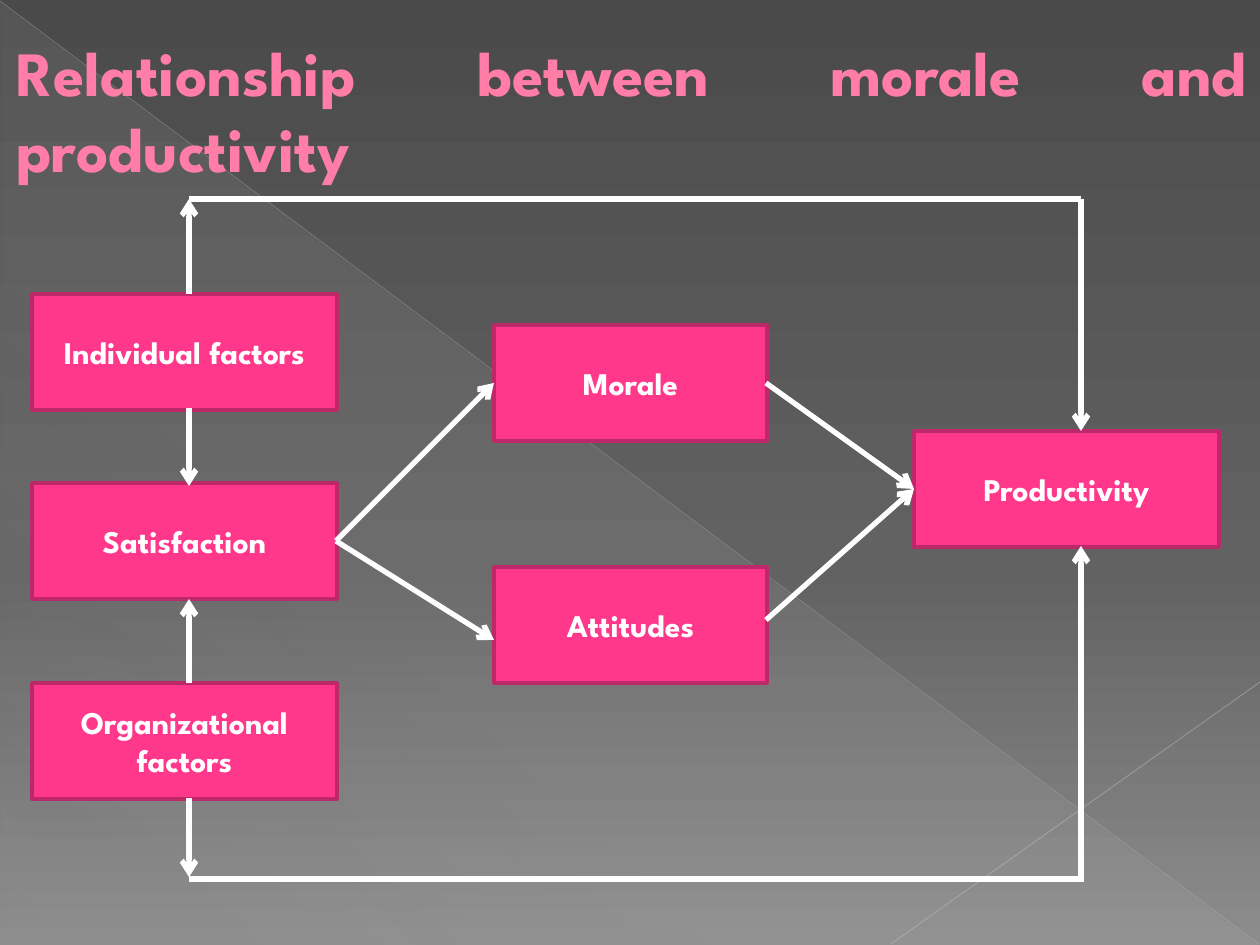
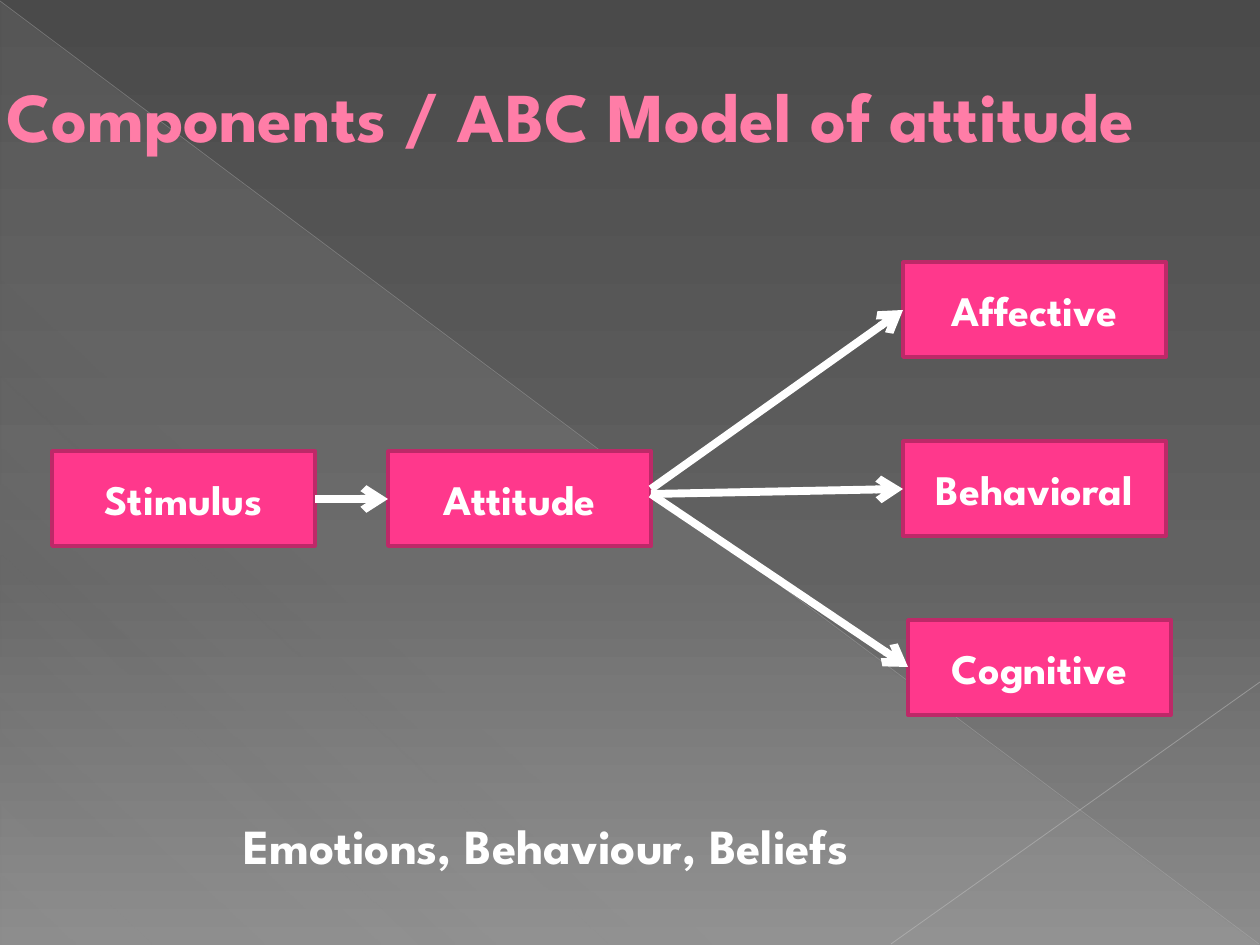
from dataclasses import dataclass

from lxml import etree
from pptx import Presentation
from pptx.dml.color import RGBColor
from pptx.enum import shapes, text
from pptx.oxml.ns import qn
from pptx import util as u

SCALE = 914400 / 126  # EMU in one px
WIDE, HIGH = 1260, 945


@dataclass(frozen=True)
class Theme:
    font: str = "League Spartan"
    white: str = "FFFFFF"
    pink: str = "FF388C"
    edge: str = "BD2968"
    title: str = "FF7DA7"
    rim: str = "B12761"
    # Gradient stops: place, colour, opacity in percent
    back: tuple = ((0, "4A4A4A", 100), (60, "626262", 100), (100, "8C8C8C", 100))
    glow: tuple = ((0, "D2D2D2", 10), (70, "D2D2D2", 8), (100, "D2D2D2", 1))
    # Hairlines: start, end, colour, width, opacity
    rays: tuple = (
        ((0, 1), (1259, 944), "BFBFBF", 0.39, 35),
        ((1260, 682), (891, 944), "C6C6C6", 0.47, 45),
    )
    # Line widths and type sizes
    border: float = 2
    rim_size: float = 0.5
    thin: float = 3
    thick: float = 4.5
    small: int = 18
    body: int = 24
    note: int = 28
    head: int = 36
    large: int = 40
    indent: int = 67


def px(*sizes):
    return [u.Emu(round(size * SCALE)) for size in sizes]


def rgb(code):
    return RGBColor.from_string(code)


def add(parent, tag, **attrs):
    return etree.SubElement(parent, qn(tag), {k: str(v) for k, v in attrs.items()})


class Deck:
    def __init__(self, theme):
        self.theme = theme
        self.show = Presentation()
        self.show.slide_width, self.show.slide_height = px(WIDE, HIGH)
        self.slide = None

    # Shared backdrop
    def page(self):
        self.slide = self.show.slides.add_slide(self.show.slide_layouts[6])
        self.blend(self.slide.background.fill, self.slide._element, self.theme.back, 90)
        wedge = self.slide.shapes.add_shape(
            shapes.MSO_SHAPE.RIGHT_TRIANGLE, *px(1, 2, 1258, 943))
        wedge.shadow.inherit = False
        wedge.line.fill.background()
        self.blend(wedge.fill, wedge._element, self.theme.glow, 133)
        for start, end, color, width, alpha in self.theme.rays:
            self.line(start, end, width, color, alpha=alpha)

    def blend(self, fill, owner, stops, angle):
        fill.gradient()
        fill.gradient_angle = 360 - angle
        group = owner.find(".//" + qn("a:gsLst"))
        for old in list(group):
            group.remove(old)
        for place, color, alpha in stops:
            stop = add(group, "a:gs", pos=place * 1000)
            tint = add(stop, "a:srgbClr", val=color)
            add(tint, "a:alpha", val=alpha * 1000)

    # Text
    def put(self, frame, words, size, color, align):
        frame.word_wrap = True
        para = frame.paragraphs[0]
        para.alignment = align
        run = para.add_run()
        run.text = words
        font = run.font
        font.name, font.size, font.bold = self.theme.font, u.Pt(size), True
        font.color.rgb = rgb(color)
        return para, run

    def title(self, place, words, size, align=text.PP_ALIGN.LEFT):
        frame = self.slide.shapes.add_textbox(*px(*place)).text_frame
        frame.vertical_anchor = text.MSO_ANCHOR.MIDDLE
        para, run = self.put(frame, words, size, self.theme.title, align)
        props = para._p.get_or_add_pPr()
        props.set("marL", str(px(self.theme.indent)[0]))
        props.set("indent", "0")
        style = run._r.get_or_add_rPr()
        rim = add(style, "a:ln", w=u.Pt(self.theme.rim_size))
        add(add(rim, "a:solidFill"), "a:srgbClr", val=self.theme.rim)
        style.insert(0, rim)

    def note(self, place, words):
        frame = self.slide.shapes.add_textbox(*px(*place)).text_frame
        self.put(frame, words, self.theme.note, self.theme.white, text.PP_ALIGN.LEFT)
        frame.auto_size = text.MSO_AUTO_SIZE.SHAPE_TO_FIT_TEXT

    # Boxes and lines
    def box(self, place, words, size):
        box = self.slide.shapes.add_shape(shapes.MSO_SHAPE.RECTANGLE, *px(*place))
        box.shadow.inherit = False
        box.fill.solid()
        box.fill.fore_color.rgb = rgb(self.theme.pink)
        box.line.color.rgb = rgb(self.theme.edge)
        box.line.width = u.Pt(self.theme.border)
        box.text_frame.vertical_anchor = text.MSO_ANCHOR.MIDDLE
        self.put(box.text_frame, words, size, self.theme.white, text.PP_ALIGN.CENTER)

    def line(self, start, end, width, color=None, alpha=100, arrow=False):
        link = self.slide.shapes.add_connector(
            shapes.MSO_CONNECTOR.STRAIGHT, *px(*start, *end))
        link.line.color.rgb = rgb(color or self.theme.white)
        link.line.width = u.Pt(width)
        props = link._element.spPr
        if alpha < 100:
            add(props.find(".//" + qn("a:srgbClr")), "a:alpha", val=alpha * 1000)
        if arrow:
            add(props.find(qn("a:ln")), "a:tailEnd", type="arrow")
        add(props, "a:effectLst")


def morale(deck):
    theme = deck.theme
    deck.page()
    deck.title((-63, 13, 1323, 193), "Relationship between morale and productivity",
               theme.head, text.PP_ALIGN.JUSTIFY)

    # Factors, effects and outcome
    tall, broad, slim = 116, 305, 273
    for left, top, wide, words in (
        (32, 294, broad, "Individual factors"),
        (32, 483, broad, "Satisfaction"),
        (32, 683, broad, "Organizational factors"),
        (494, 325, slim, "Morale"),
        (494, 567, slim, "Attitudes"),
        (914, 431, broad, "Productivity"),
    ):
        deck.box((left, top, wide, tall), words, theme.small)

    # Arrows between the boxes
    west, east = 189, 1081
    fork, goal = (336, 541), (914, 489)
    for start, end in (
        (fork, (494, 383)),
        (fork, (494, 640)),
        ((766, 620), goal),
        ((766, 383), goal),
        ((west, 408), (west, 486)),
        ((west, 683), (west, 599)),
        ((west, 294), (west, 199)),
        ((west, 798), (west, 877)),
        ((east, 199), (east, 431)),
        ((east, 882), (east, 546)),
    ):
        deck.line(start, end, theme.thin, arrow=True)

    # Outer loop
    for level in (199, 879):
        deck.line((west, level), (east, level), theme.thin)


def model(deck):
    theme = deck.theme
    deck.page()
    deck.title((-73, 18, 1365, 193), "Components / ABC Model of attitude", theme.large)

    # Cause on the left, three parts on the right
    wide, tall, top, pitch = 263, 95, 262, 179
    for left, words in ((52, "Stimulus"), (388, "Attitude")):
        deck.box((left, 451, wide, tall), words, theme.body)
    parts = ((903, "Affective"), (903, "Behavioral"), (908, "Cognitive"))
    for row, (left, words) in enumerate(parts):
        deck.box((left, top + row * pitch, wide, tall), words, theme.body)

    # Arrows
    for start, end in (
        ((651, 494), (903, 489)),
        ((651, 489), (903, 310)),
        ((651, 494), (908, 667)),
        ((315, 499), (388, 499)),
    ):
        deck.line(start, end, theme.thick, arrow=True)

    deck.note((231, 809, 977, 72), "Emotions, Behaviour, Beliefs")


def main():
    deck = Deck(Theme())
    morale(deck)
    model(deck)
    deck.show.save("out.pptx")


if __name__ == "__main__":
    main()
